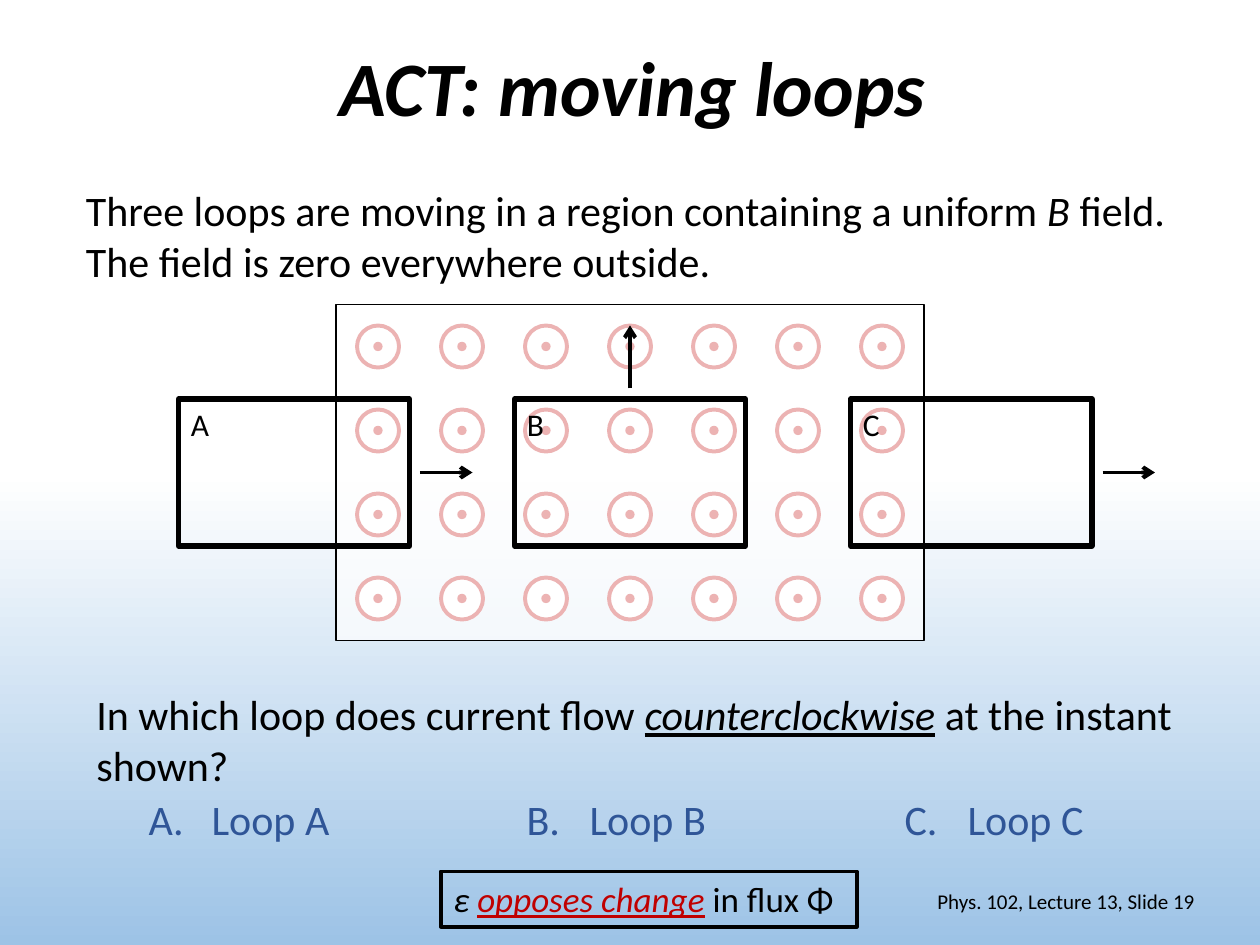
from lxml.etree import SubElement
from pptx import Presentation
from pptx.dml.color import RGBColor
from pptx.enum.shapes import MSO_CONNECTOR as CONN, MSO_SHAPE as SHAPE
from pptx.enum.text import MSO_ANCHOR as ANCHOR, PP_ALIGN as ALIGN
from pptx.oxml.ns import qn
from pptx.util import Pt

FONT = "Calibri"
COLORS = {
    "white": "FFFFFF",
    "sky": "9DC3E6",
    "black": "000000",
    "red": "C00000",
    "blue": "2F5597",
}
# Field region and its grid of field symbols
FIELD_X, FIELD_Y, PITCH, COLS, ROWS = 192, 174, 48, 7, 4
# Moving loops: name, left, width
LOOPS = [("A", 102, 132), ("B", 294, 132), ("C", 486, 138)]
LOOP_Y, LOOP_H = 228, 84
# Velocity arrows: start x, y, end x, y
ARROWS = [(240, 270, 270, 270), (630, 270, 660, 270), (360, 222, 360, 186)]
ANSWER_TABS = (36, 216, 252, 432, 468)


def rgb(name):
    return RGBColor.from_string(COLORS[name])


def set_background(s):
    fill = s.background.fill
    fill.gradient()
    fill.gradient_angle = 270
    stops = ((0.5, "white"), (1, "sky"))
    for stop, (position, color) in zip(fill.gradient_stops, stops):
        stop.position = position
        stop.color.rgb = rgb(color)


def write(sp, runs, size=24, color="black", bold=False, align=ALIGN.LEFT,
          anchor=ANCHOR.TOP, wrap=True, spacing=None):
    """Fill a shape with one paragraph; runs are (text, format) pairs."""
    tf = sp.text_frame
    tf.word_wrap = wrap
    tf.vertical_anchor = anchor
    p = tf.paragraphs[0]
    p.alignment = align
    if spacing:
        p.line_spacing = spacing
    for text, style in runs:
        r = p.add_run()
        r.text = text
        r.font.name = FONT
        r.font.size = Pt(size)
        r.font.bold = bold
        r.font.italic = style.get("italic", False)
        r.font.underline = style.get("underline", False)
        r.font.color.rgb = rgb(style.get("color", color))
    return p


def add_text(s, box, runs, **style):
    sp = s.shapes.add_textbox(*map(Pt, box))
    return write(sp, runs, **style)


def add_shape(shapes, kind, box, width, line="black", fill=None):
    sp = shapes.add_shape(kind, *map(Pt, box))
    sp.shadow.inherit = False
    sp.line.color.rgb = rgb(line)
    sp.line.width = Pt(width)
    if fill:
        sp.fill.solid()
        sp.fill.fore_color.rgb = rgb(fill)
    else:
        sp.fill.background()
    return sp


def add_arrow(s, ends):
    arrow = s.shapes.add_connector(CONN.STRAIGHT, *map(Pt, ends))
    arrow.line.color.rgb = rgb("black")
    arrow.line.width = Pt(2.25)
    SubElement(arrow.line._get_or_add_ln(), qn("a:tailEnd"), type="arrow")
    SubElement(arrow._element.spPr, qn("a:effectLst"))


def add_field(s):
    # Circles with a dot: field pointing out of the page
    symbols = s.shapes.add_group_shape().shapes
    for row in range(ROWS):
        for col in range(COLS):
            cx = FIELD_X + PITCH * (col + 0.5)
            cy = FIELD_Y + PITCH * (row + 0.5)
            for d, width, fill in ((24, 2.25, "white"), (4.3, 1, "red")):
                box = (cx - d / 2, cy - d / 2, d, d)
                add_shape(symbols, SHAPE.OVAL, box, width, "red", fill)
    # Translucent region over the symbols
    box = (FIELD_X, FIELD_Y, COLS * PITCH, ROWS * PITCH)
    region = add_shape(s.shapes, SHAPE.RECTANGLE, box, 1, fill="white")
    color = region._element.spPr.find(qn("a:solidFill"))[0]
    SubElement(color, qn("a:alpha"), val="70000")


def add_answers(s):
    answers = "A.\tLoop A\tB.\tLoop B\tC.\tLoop C"
    p = add_text(s, (77.8, 450, 553, 36), [(answers, {})], color="blue")
    p.space_after = Pt(6)
    tabs = SubElement(p._p.get_or_add_pPr(), qn("a:tabLst"))
    for stop in ANSWER_TABS:
        SubElement(tabs, qn("a:tab"), pos=str(Pt(stop)), algn="l")


def main():
    prs = Presentation()
    prs.slide_width, prs.slide_height = Pt(720), Pt(540)
    s = prs.slides.add_slide(prs.slide_layouts[6])
    set_background(s)

    # Title, footer and problem text
    add_text(s, (51, 0, 621, 104.4), [("ACT: moving loops", {"italic": True})],
             size=44, bold=True, align=ALIGN.CENTER, anchor=ANCHOR.MIDDLE,
             spacing=0.9)
    add_text(s, (508.3, 500.4, 181.5, 28.8),
             [("Phys. 102, Lecture 13, Slide 19", {})],
             size=12, align=ALIGN.RIGHT, anchor=ANCHOR.MIDDLE)
    add_text(s, (42, 102, 642, 65.5), [
        ("Three loops are moving in a region containing a uniform ", {}),
        ("B", {"italic": True}),
        (" field. The field is zero everywhere outside.", {})])
    add_text(s, (48, 390, 630, 65.5), [
        ("In which loop does current flow ", {}),
        ("counterclockwise", {"italic": True, "underline": True}),
        (" at the instant shown?", {})])

    # Field, loops and velocities
    add_field(s)
    for name, x, width in LOOPS:
        add_shape(s.shapes, SHAPE.RECTANGLE, (x, LOOP_Y, width, LOOP_H), 3)
        add_text(s, (x, LOOP_Y, 25, 29), [(name, {})], size=18, wrap=False)
    for ends in ARROWS:
        add_arrow(s, ends)

    # Answers and hint
    add_answers(s)
    hint = add_shape(s.shapes, SHAPE.RECTANGLE, (252, 498, 237.6, 31.5), 2.25)
    write(hint, [
        ("ε ", {"italic": True}),
        ("opposes change", {"italic": True, "underline": True, "color": "red"}),
        (" in flux Φ", {})], size=20)

    prs.save("out.pptx")


if __name__ == "__main__":
    main()
